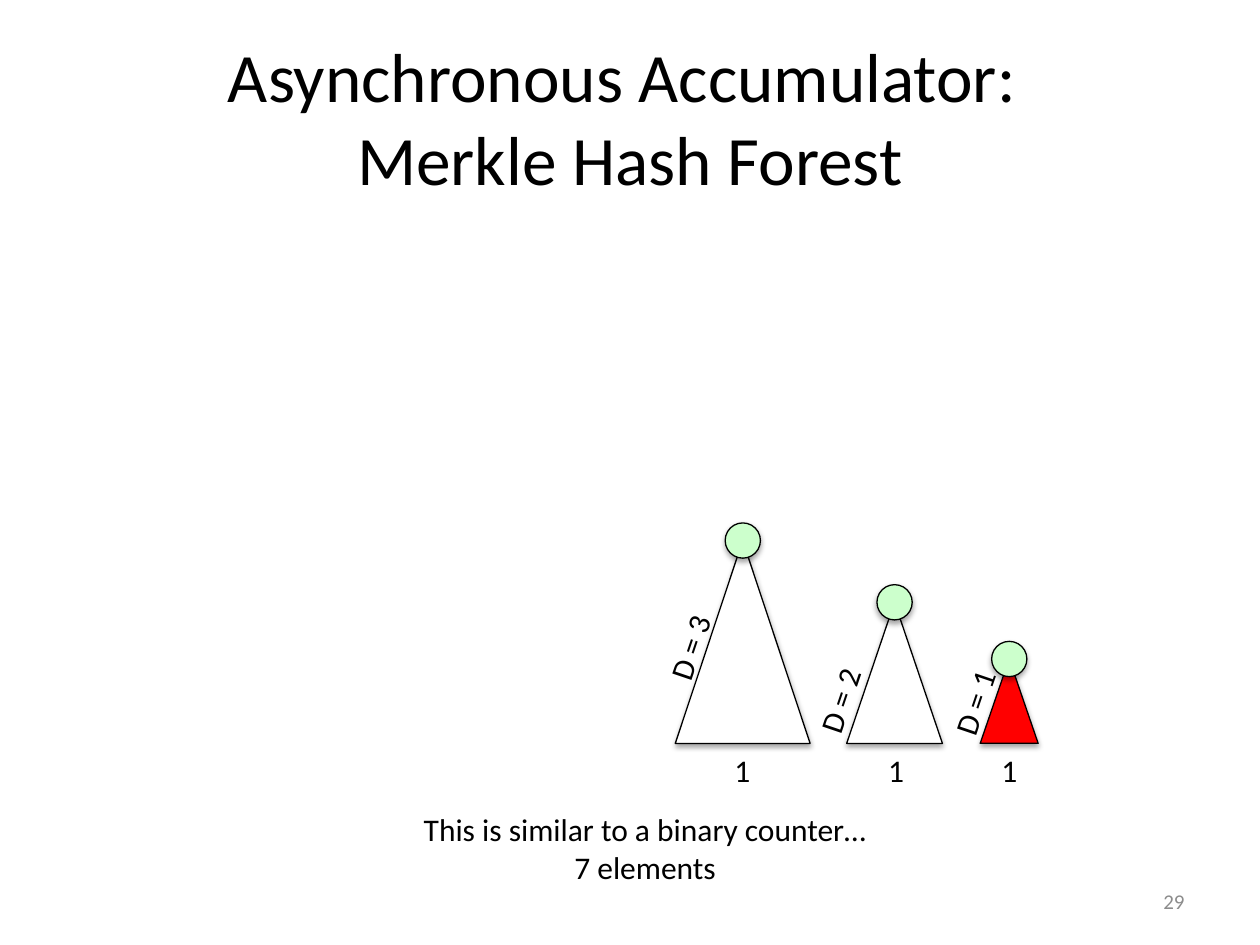
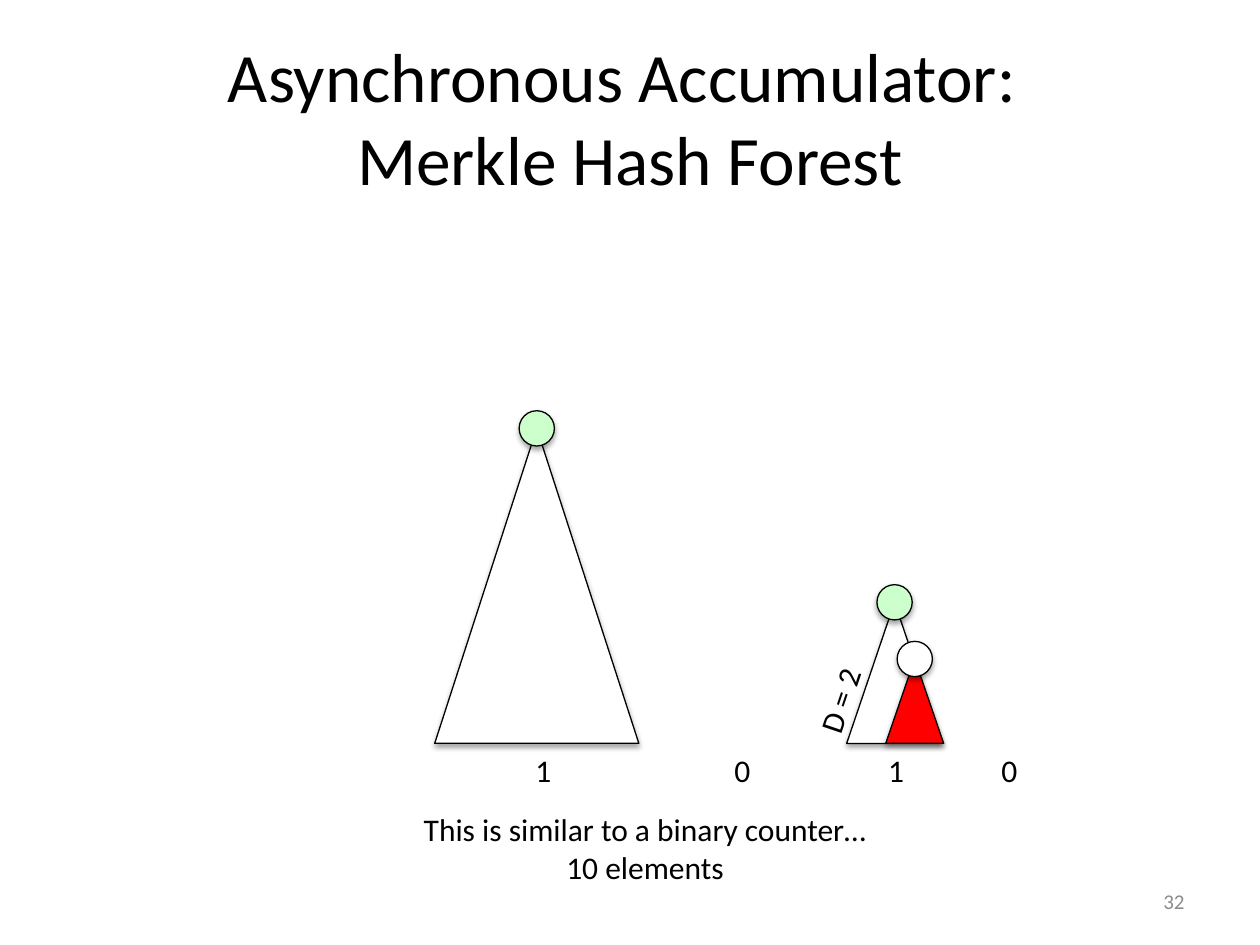
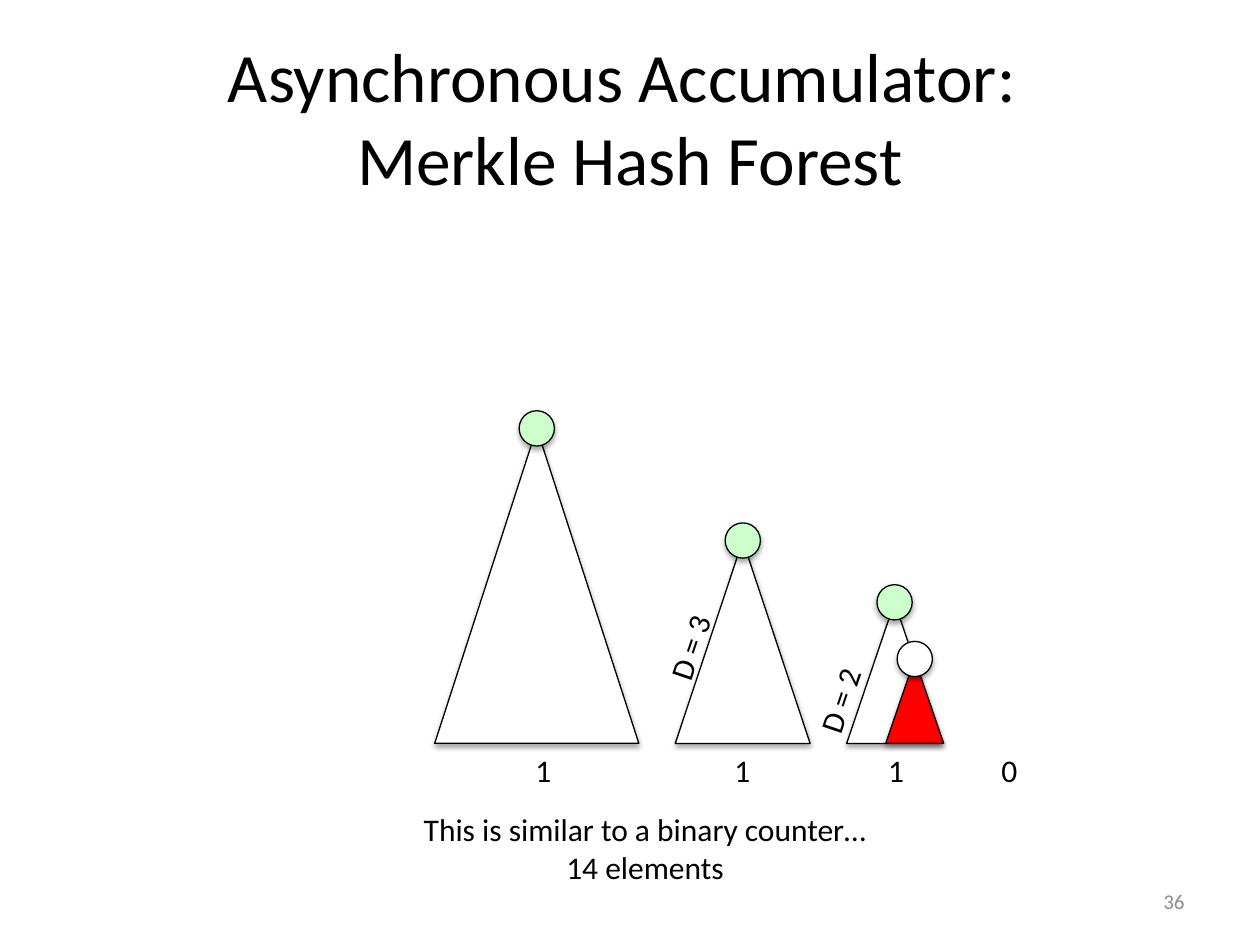
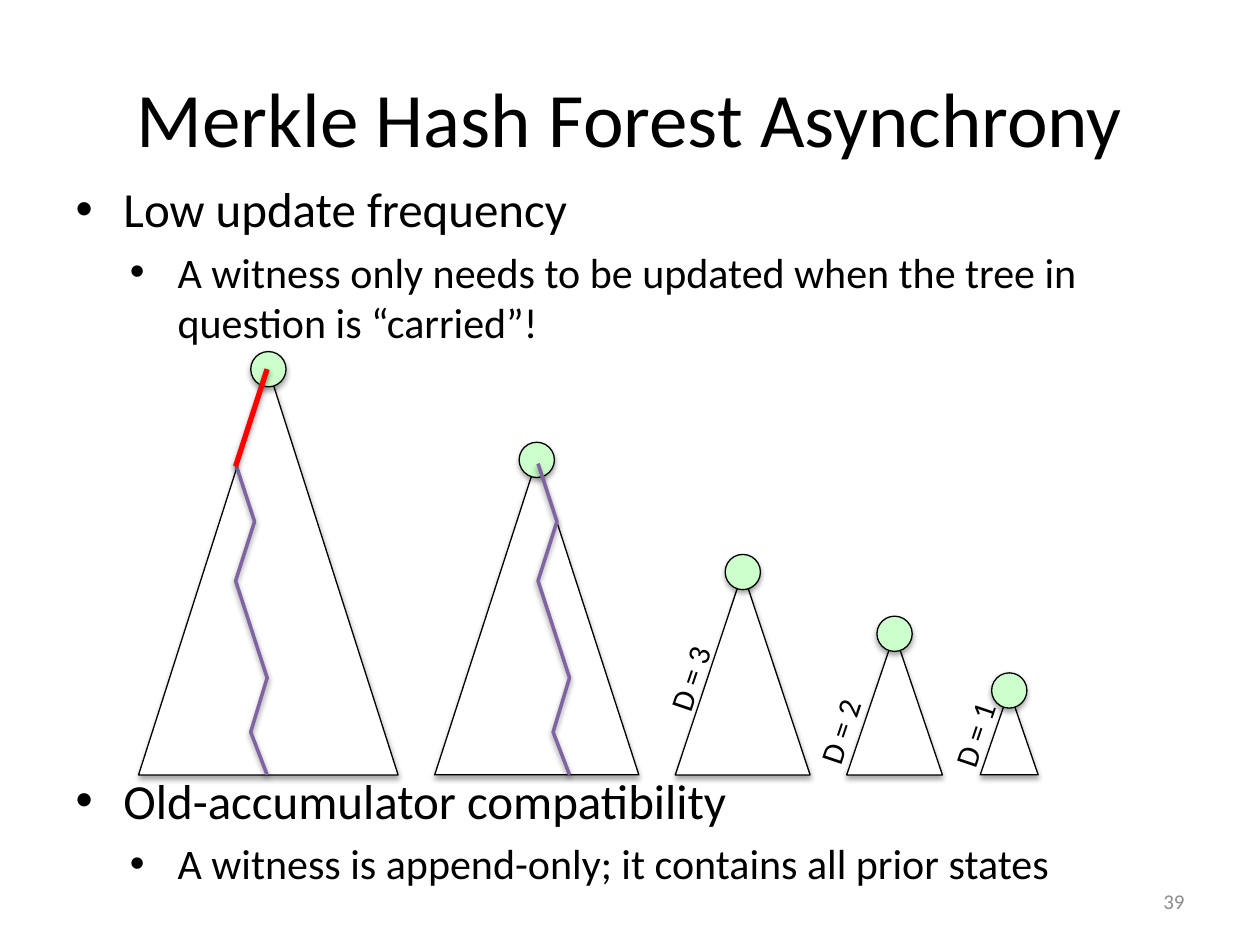
from dataclasses import dataclass

from lxml.etree import SubElement
from pptx import Presentation
from pptx.dml.color import RGBColor
from pptx.enum.shapes import MSO_CONNECTOR as CONN, MSO_SHAPE as SHAPE
from pptx.enum.text import MSO_ANCHOR as ANCHOR, MSO_AUTO_SIZE as AUTO, PP_ALIGN as ALIGN
from pptx.oxml.ns import qn
from pptx.util import Inches, Pt


@dataclass(frozen=True)
class Theme:
    font: str = "Calibri"
    ink: str = "000000"
    white: str = "FFFFFF"
    grey: str = "8C8C8C"
    root: str = "CCFFCC"
    red: str = "FF0000"
    purple: str = "8064A2"
    title: float = 44
    long_title: float = 39.6
    text: float = 18
    number: float = 12
    bullets: tuple = (28, 24)
    indents: tuple = (0.38, 0.81)


@dataclass(frozen=True)
class Tree:
    """A hash tree: apex x, size, digit position and label centre (from the apex and base)."""
    x: float
    width: float
    height: float
    digit_left: float = 0
    label_at: tuple = ()


TREES = {
    5: Tree(2.13, 2.06, 3.22),
    4: Tree(4.26, 1.62, 2.5, 4.15),
    3: Tree(5.895, 1.07, 1.61, 5.73, (-0.42, 0.77)),
    2: Tree(7.1, 0.76, 1.12, 6.95, (-0.435, 0.35)),
    1: Tree(8.01, 0.46, 0.67, 7.85, (-0.275, 0.33)),
}
CARRIED = Tree(7.26, 0.46, 0.67)
ROOT_SIZE = 0.28
LABEL_WIDTH, LINE_HEIGHT = 0.73, 0.4
LABEL_ANGLE = 288.7
COUNTER_BASE, WITNESS_BASE = 5.9, 6.15
# Witness route: x from its left edge, height above the base
ROUTE = [(0, 2.47), (0.15, 2.01), (0, 1.54), (0.25, 0.77), (0.12, 0.34), (0.25, 0)]


class Deck:
    def __init__(self, theme):
        self.theme = theme
        self.prs = Presentation()
        self.prs.slide_width, self.prs.slide_height = Inches(10), Inches(7.5)
        self.slide = None

    # Shared formatting
    def format(self, tf, size, color=None, align=None):
        for p in tf.paragraphs:
            if align is not None:
                p.alignment = align
            for r in p.runs:
                r.font.name, r.font.size = self.theme.font, Pt(size)
                r.font.color.rgb = RGBColor.from_string(color or self.theme.ink)

    def place(self, sp, left, top, width, height):
        sp.left, sp.top = Inches(left), Inches(top)
        sp.width, sp.height = Inches(width), Inches(height)

    def shadow(self, sp, distance=1.8, alpha=35):
        effects = SubElement(sp._element.spPr, qn("a:effectLst"))
        outer = SubElement(effects, qn("a:outerShdw"), blurRad=str(Pt(3.1)),
                           dist=str(Pt(distance)), dir="5400000", rotWithShape="0")
        color = SubElement(outer, qn("a:srgbClr"), val=self.theme.ink)
        SubElement(color, qn("a:alpha"), val=str(alpha * 1000))

    def stroke(self, sp, color, width):
        sp.line.color.rgb = RGBColor.from_string(color)
        sp.line.width = Pt(width)

    # Slide, title and page number
    def new_slide(self, title, number, size, layout=5):
        self.slide = self.prs.slides.add_slide(self.prs.slide_layouts[layout])
        sp = self.slide.shapes.title
        self.place(sp, 0.5, 0.3, 9, 1.25)
        tf = sp.text_frame
        tf.text = title
        tf.auto_size, tf.vertical_anchor = AUTO.NONE, ANCHOR.MIDDLE
        self.format(tf, size, align=ALIGN.CENTER)
        tf = self.text(str(number), 7.17, 6.95, 2.33, LINE_HEIGHT, self.theme.number,
                       self.theme.grey, ALIGN.RIGHT).text_frame
        tf.word_wrap, tf.auto_size, tf.vertical_anchor = True, AUTO.NONE, ANCHOR.MIDDLE

    # Text
    def text(self, text, left, top, width, height, size=None, color=None, align=None,
             parent=None):
        sp = (parent or self.slide).shapes.add_textbox(
            Inches(left), Inches(top), Inches(width), Inches(height))
        tf = sp.text_frame
        tf.text = text
        tf.word_wrap, tf.auto_size = False, AUTO.SHAPE_TO_FIT_TEXT
        self.format(tf, size or self.theme.text, color, align)
        return sp

    def bullets(self, items):
        """Fill the body with (level, text, space before in points)."""
        sp = self.slide.placeholders[1]
        self.place(sp, 0.5, 1.37, 9, 5.98)
        tf = sp.text_frame
        tf.text = "\n".join(text for _, text, _ in items)
        tf.auto_size = AUTO.NONE
        self.format(tf, self.theme.bullets[0])
        for p, (level, _, space) in zip(tf.paragraphs, items):
            p.level, p.space_before = level, Pt(space)
            p.runs[0].font.size = Pt(self.theme.bullets[level])
            pPr = p._p.get_or_add_pPr()
            pPr.set("marL", str(Inches(self.theme.indents[level])))
            pPr.set("indent", str(Inches(-0.38)))
            SubElement(pPr, qn("a:buFont"), typeface="Arial")
            SubElement(pPr, qn("a:buChar"), char="•")

    # Trees and routes
    def solid(self, parent, kind, left, top, width, height, fill):
        sp = parent.shapes.add_shape(
            kind, Inches(left), Inches(top), Inches(width), Inches(height))
        sp.fill.solid()
        sp.fill.fore_color.rgb = RGBColor.from_string(fill)
        self.stroke(sp, self.theme.ink, 0.75)
        self.shadow(sp)

    def tree(self, tree, base, label="", fill=None, root=None):
        group = self.slide.shapes.add_group_shape()
        apex = base - tree.height
        self.solid(group, SHAPE.ISOSCELES_TRIANGLE, tree.x - tree.width / 2, apex,
                   tree.width, tree.height, fill or self.theme.white)
        self.solid(group, SHAPE.OVAL, tree.x - ROOT_SIZE / 2, apex - ROOT_SIZE / 2,
                   ROOT_SIZE, ROOT_SIZE, root or self.theme.root)
        if tree.label_at:
            dx, up = tree.label_at
            sp = self.text(label, tree.x + dx - LABEL_WIDTH / 2, base - up - LINE_HEIGHT / 2,
                           LABEL_WIDTH, LINE_HEIGHT, parent=group)
            sp.rotation = LABEL_ANGLE
        return group

    def route(self, group, left, base):
        points = [(Inches(left + dx), Inches(base - up)) for dx, up in ROUTE]
        builder = group.shapes.build_freeform(*points[0])
        builder.add_line_segments(points[1:], close=False)
        sp = builder.convert_to_shape()
        sp.fill.background()
        self.stroke(sp, self.theme.purple, 2)
        self.shadow(sp, 1.6, 38)

    def line(self, group, x1, y1, x2, y2, color, width):
        sp = group.shapes.add_connector(
            CONN.STRAIGHT, Inches(x1), Inches(y1), Inches(x2), Inches(y2))
        self.stroke(sp, color, width)
        self.shadow(sp, 1.6, 38)


def counter_slide(deck, count, number):
    """Show one tree for each set bit of the count; the newest leaf's tree is red."""
    theme = deck.theme
    deck.new_slide("Asynchronous Accumulator: \vMerkle Hash Forest", number, theme.long_title)
    for depth in range(1, count.bit_length() + 1):
        tree = TREES[depth]
        bit = count >> (depth - 1) & 1
        deck.text(str(bit), tree.digit_left, 5.91, 0.33, LINE_HEIGHT)
        if bit:
            deck.tree(tree, COUNTER_BASE, f"D = {depth}", theme.red if depth == 1 else None)
    if count % 2 == 0:
        deck.tree(CARRIED, COUNTER_BASE, fill=theme.red, root=theme.white)
    deck.text(f"This is similar to a binary counter…\n{count} elements",
              3.24, 6.38, 3.76, 0.71, align=ALIGN.CENTER)


def asynchrony_slide(deck, number):
    theme = deck.theme
    deck.new_slide("Merkle Hash Forest Asynchrony", number, theme.title, layout=1)
    deck.bullets([
        (0, "Low update frequency", 5.6),
        (1, "A witness only needs to be updated when the tree in question is “carried”!", 4.8),
        (0, "Old-accumulator compatibility", 242),
        (1, "A witness is append-only; it contains all prior states", 4.8),
    ])
    groups = {depth: deck.tree(TREES[depth], WITNESS_BASE, f"D = {depth}")
              for depth in (3, 2, 1, 4, 5)}
    # Witness routes, with the new step in red
    for depth, left in ((4, 4.27), (5, 1.87)):
        deck.route(groups[depth], left, WITNESS_BASE)
    deck.line(groups[5], 1.87, 3.7, 2.12, 2.93, theme.red, 3)


def main():
    deck = Deck(Theme())
    for count, number in ((7, 29), (10, 32), (14, 36)):
        counter_slide(deck, count, number)
    asynchrony_slide(deck, 39)
    deck.prs.save("out.pptx")


if __name__ == "__main__":
    main()
